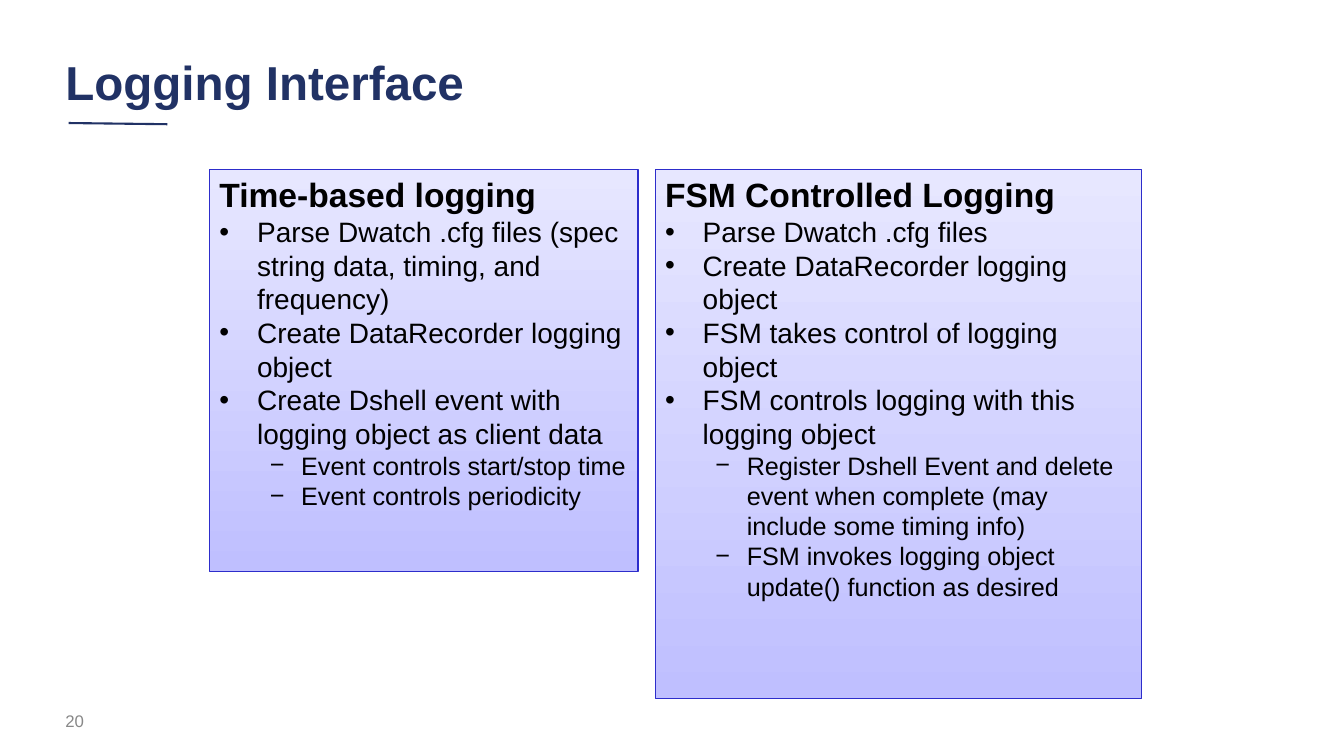
from lxml.etree import SubElement
from pptx import Presentation
from pptx.dml.color import RGBColor
from pptx.enum.shapes import MSO_CONNECTOR, MSO_SHAPE
from pptx.enum.text import MSO_ANCHOR, PP_ALIGN
from pptx.oxml.ns import qn
from pptx.util import Cm, Pt

COLORS = {
    "navy": "213265",
    "panel_bottom": "BFBFFF",
    "panel_top": "E7E7FF",
    "panel_border": "2D2DCB",
    "text": "000000",
    "page_number": "888888",
}

# Outline level: (bullet, left margin, hanging indent, text size)
LEVELS = [
    ("•", Cm(0.95), Cm(0.95), Pt(20)),
    ("−", Cm(2.06), Cm(0.79), Pt(18)),
]

TIME_BASED = [
    (0, "Parse Dwatch .cfg files (spec string data, timing, and frequency)"),
    (0, "Create DataRecorder logging object"),
    (0, "Create Dshell event with logging object as client data"),
    (1, "Event controls start/stop time"),
    (1, "Event controls periodicity"),
]
FSM_CONTROLLED = [
    (0, "Parse Dwatch .cfg files"),
    (0, "Create DataRecorder logging object"),
    (0, "FSM takes control of logging object"),
    (0, "FSM controls logging with this logging object"),
    (1, "Register Dshell Event and delete event when complete "
        "(may include some timing info)"),
    (1, "FSM invokes logging object update() function as desired"),
]


def color(name):
    return RGBColor.from_string(COLORS[name])


def set_font(paragraph, size, color_name, bold=False):
    font = paragraph.font
    font.name, font.size, font.bold = "Arial", size, bold
    font.color.rgb = color(color_name)


def add_bullet(paragraph, level):
    bullet, margin, hanging, _ = LEVELS[level]
    paragraph.level = level
    properties = paragraph._p.get_or_add_pPr()
    properties.set("marL", str(margin))
    properties.set("indent", str(-hanging))
    bullet_color = SubElement(properties, qn("a:buClr"))
    SubElement(bullet_color, qn("a:srgbClr"), val=COLORS["text"])
    SubElement(properties, qn("a:buFont"), typeface="Arial")
    SubElement(properties, qn("a:buChar"), char=bullet)


def add_label(slide, text, left, top, width, height, size, color_name, bold=False):
    frame = slide.shapes.add_textbox(left, top, width, height).text_frame
    frame.word_wrap = True
    frame.vertical_anchor = MSO_ANCHOR.MIDDLE
    paragraph = frame.paragraphs[0]
    paragraph.text = text
    set_font(paragraph, size, color_name, bold)
    return paragraph


def add_header(slide, left, top, width, height):
    title = add_label(slide, "Logging Interface", left, top, width, height,
                      Pt(34), "navy", bold=True)
    title.line_spacing = 0.9

    # Short rule under the title
    rule_left, rule_top = left + Cm(0.33), top + height
    rule = slide.shapes.add_connector(
        MSO_CONNECTOR.STRAIGHT, rule_left, rule_top,
        rule_left + Cm(2.49), rule_top + Cm(0.03))
    rule.line.color.rgb = color("navy")
    rule.line.width = Pt(1.5)
    SubElement(rule._element.spPr, qn("a:effectLst"))


def add_panel(slide, heading, items, left, top, width, height):
    panel = slide.shapes.add_shape(MSO_SHAPE.RECTANGLE, left, top, width, height)
    panel.shadow.inherit = False
    panel.line.color.rgb = color("panel_border")
    panel.line.width = Pt(0.75)

    # Shading from dark at the bottom to light at the top
    panel.fill.gradient()
    panel.fill.gradient_angle = 90
    for stop, name, position in zip(panel.fill.gradient_stops,
                                    ("panel_bottom", "panel_top"), (0, 1)):
        stop.color.rgb = color(name)
        stop.position = position

    # Heading and outline
    frame = panel.text_frame
    frame.word_wrap = True
    frame.vertical_anchor = MSO_ANCHOR.TOP
    title = frame.paragraphs[0]
    title.text = heading
    title.alignment = PP_ALIGN.LEFT
    set_font(title, Pt(24), "text", bold=True)
    for level, text in items:
        item = frame.add_paragraph()
        item.text = text
        item.alignment = PP_ALIGN.LEFT
        add_bullet(item, level)
        set_font(item, LEVELS[level][3], "text")


def main():
    presentation = Presentation()
    presentation.slide_width, presentation.slide_height = Cm(33.87), Cm(19.05)
    slide = presentation.slides.add_slide(presentation.slide_layouts[6])

    margin, panel_top = Cm(1.4), Cm(4.27)
    add_header(slide, margin, Cm(1.17), Cm(28.24), Cm(1.93))
    add_panel(slide, "Time-based logging", TIME_BASED,
              Cm(5.28), panel_top, Cm(10.8), Cm(10.13))
    add_panel(slide, "FSM Controlled Logging", FSM_CONTROLLED,
              Cm(16.51), panel_top, Cm(12.27), Cm(13.34))
    add_label(slide, "20", margin, Cm(17.65), Cm(7.62), Cm(1.02),
              Pt(12), "page_number")

    presentation.save("out.pptx")


if __name__ == "__main__":
    main()
